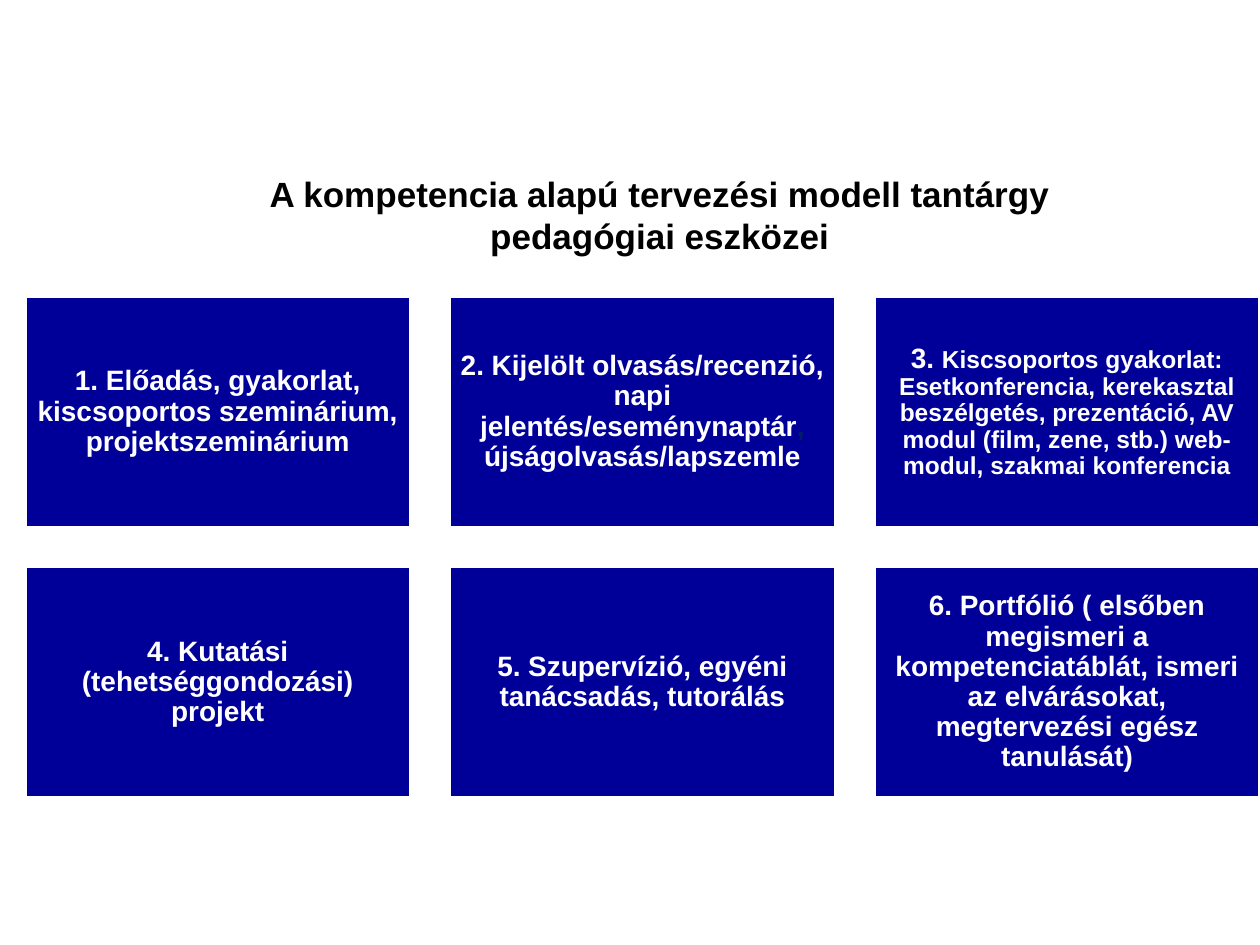
import pptx
import pptx.dml.color
import pptx.enum.shapes
import pptx.enum.text
import pptx.util
from dataclasses import dataclass

Cm = pptx.util.Cm
Pt = pptx.util.Pt

TITLE = "A kompetencia alapú tervezési modell tantárgy pedagógiai eszközei"
TOOLS = [
    [("1. Előadás, gyakorlat, kiscsoportos szeminárium, projektszeminárium", {})],
    [
        ("2. Kijelölt olvasás/recenzió, napi jelentés/eseménynaptár", {}),
        (", ", {"color": "muted"}),
        ("újságolvasás/lapszemle", {}),
    ],
    [
        ("3. ", {}),
        (
            "Kiscsoportos gyakorlat: Esetkonferencia, kerekasztal beszélgetés, "
            "prezentáció, AV modul (film, zene, stb.) web-modul, szakmai konferencia",
            {"size": "small"},
        ),
    ],
    [("4. Kutatási (tehetséggondozási) projekt", {})],
    [("5. Szupervízió, egyéni tanácsadás, tutorálás", {})],
    [(
        "6. Portfólió ( elsőben megismeri a kompetenciatáblát, ismeri az "
        "elvárásokat, megtervezési egész tanulását)",
        {},
    )],
]


@dataclass(frozen=True)
class Theme:
    font: str = "Arial"
    title: int = 20
    body: int = 16
    small: int = 14
    dark: str = "000000"
    light: str = "FFFFFF"
    muted: str = "002060"
    tile: str = "000099"


THEME = Theme()
COLUMNS = 3
LEFT, TOP = 0.5, 5.97
WIDTH, HEIGHT = 7.78, 4.67
GAP = 0.78
INSET = 0.18


def rgb(name):
    return pptx.dml.color.RGBColor.from_string(getattr(THEME, name))


def add_span(para, text, *, size="body", color="light"):
    span = para.add_run()
    span.text = text
    span.font.name = THEME.font
    span.font.size = Pt(getattr(THEME, size))
    span.font.bold = True
    span.font.color.rgb = rgb(color)


def centred_para(frame):
    frame.word_wrap = True
    para = frame.paragraphs[0]
    para.alignment = pptx.enum.text.PP_ALIGN.CENTER
    return para


def add_title(page):
    box = page.shapes.add_textbox(Cm(4.5), Cm(3.36), Cm(17.6), Cm(1.96))
    add_span(centred_para(box.text_frame), TITLE, size="title", color="dark")


def add_tile(page, index, spans):
    row, column = divmod(index, COLUMNS)
    box = page.shapes.add_shape(
        pptx.enum.shapes.MSO_SHAPE.RECTANGLE,
        Cm(LEFT + column * (WIDTH + GAP)),
        Cm(TOP + row * (HEIGHT + GAP)),
        Cm(WIDTH),
        Cm(HEIGHT),
    )
    box.shadow.inherit = False
    box.fill.solid()
    box.fill.fore_color.rgb = rgb("tile")
    box.line.color.rgb = rgb("light")
    box.line.width = Pt(2)
    frame = box.text_frame
    frame.vertical_anchor = pptx.enum.text.MSO_ANCHOR.MIDDLE
    for side in ("left", "top", "right", "bottom"):
        setattr(frame, f"margin_{side}", Cm(INSET))
    para = centred_para(frame)
    para.line_spacing = 0.9
    for text, style in spans:
        add_span(para, text, **style)


def main():
    deck = pptx.Presentation()
    deck.slide_width, deck.slide_height = Cm(25.4), Cm(19.05)
    page = deck.slides.add_slide(deck.slide_layouts[6])
    for index, spans in enumerate(TOOLS):
        add_tile(page, index, spans)
    add_title(page)
    deck.save("out.pptx")


if __name__ == "__main__":
    main()
